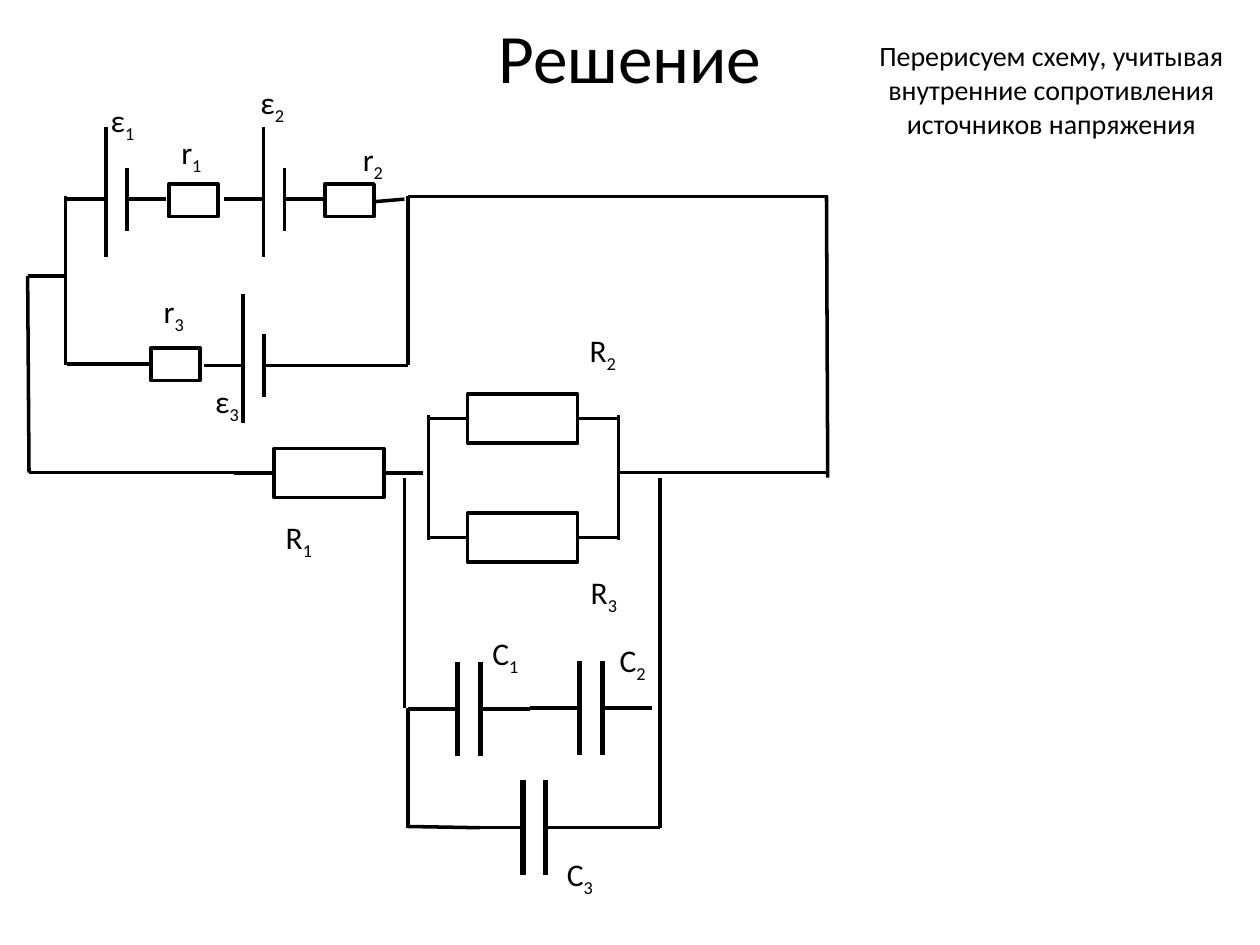
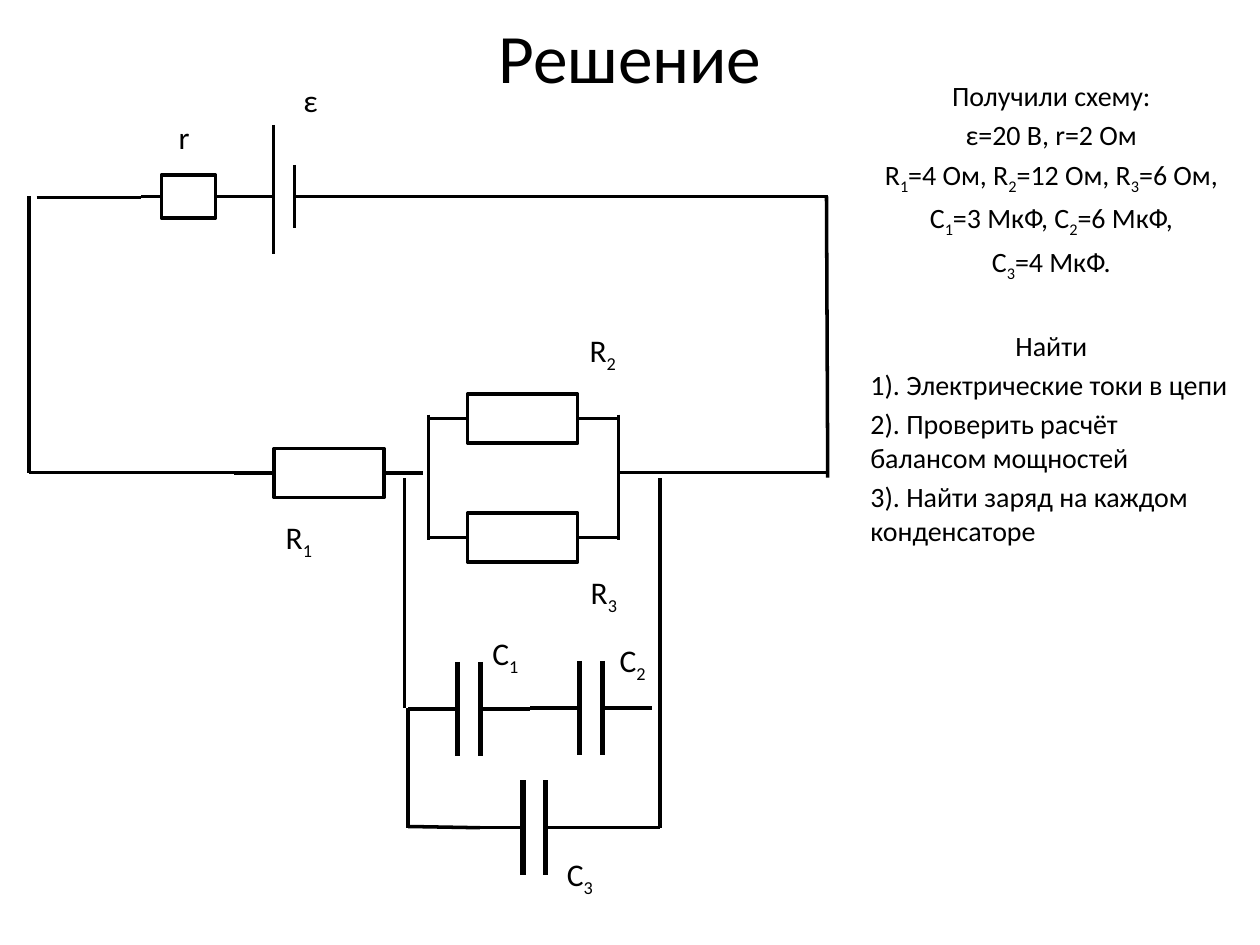
"""Build two slides that solve a circuit: the full scheme and the simplified one."""
import dataclasses

import lxml.etree
import pptx
import pptx.dml.color
import pptx.enum.shapes
import pptx.enum.text
import pptx.oxml.ns
import pptx.slide
import pptx.text.text
import pptx.util

Pt = pptx.util.Pt
ALIGN = pptx.enum.text.PP_ALIGN
AUTO_SIZE = pptx.enum.text.MSO_AUTO_SIZE
ANCHOR = pptx.enum.text.MSO_ANCHOR

COLOURS = {"ink": "000000", "paper": "FFFFFF"}
TITLE_FONT = {"name": "Calibri", "size": Pt(39.6)}
NOTE_FONT = {"name": "Calibri", "size": Pt(16)}
LABEL_FONT = {"name": "Calibri", "size": Pt(18)}
TITLE_FRAME = {"word_wrap": True, "auto_size": AUTO_SIZE.NONE, "vertical_anchor": ANCHOR.MIDDLE}
NOTE_FRAME = {"word_wrap": True, "auto_size": AUTO_SIZE.NONE, "vertical_anchor": ANCHOR.TOP}
LABEL_FRAME = {"word_wrap": False, "auto_size": AUTO_SIZE.SHAPE_TO_FIT_TEXT}
WIRE_WIDTH = 2
PLATE_WIDTH = 3


@dataclasses.dataclass(frozen=True)
class Wire:
    x1: float
    y1: float
    x2: float
    y2: float
    width: float = WIRE_WIDTH


@dataclasses.dataclass(frozen=True)
class Resistor:
    left: float
    axis: float
    width: float = 63
    height: float = 28
    lead: float = 22.5


@dataclasses.dataclass(frozen=True)
class Source:
    plate: float
    axis: float


@dataclasses.dataclass(frozen=True)
class Capacitor:
    plate: float
    axis: float


@dataclasses.dataclass(frozen=True)
class Label:
    text: str
    left: float
    top: float
    width: float = 30


@dataclasses.dataclass(frozen=True)
class Line:
    text: str
    alignment: ALIGN = ALIGN.CENTER
    space_before: float = 3.2


@dataclasses.dataclass(frozen=True)
class Scheme:
    circuit: list
    note_top: float
    note: list[Line]


LOAD = [
    Wire(16.6, 270, 135.4, 270),
    Wire(244.8, 236.9, 244.8, 308.5),
    Wire(353.5, 236.9, 353.5, 308.5),
    Wire(353.5, 270, 472.3, 270),
    Wire(472.3, 112.3, 473, 272.9),
    Wire(231.1, 404.6, 231.1, 272.9),
    Wire(233.3, 404.6, 233.3, 473),
    Wire(233.3, 472.3, 274.3, 473),
    Wire(339.8, 473, 377.3, 473),
    Wire(377.3, 473, 377.3, 272.9),
    Resistor(156.5, 270.3),
    Resistor(267.1, 239.3),
    Resistor(267.1, 307.2),
    Capacitor(261.4, 405.2),
    Capacitor(331.2, 404.6),
    Capacitor(298.8, 473),
    Label("R_1", 156.2, 292.3),
    Label("R_2", 329.8, 185.8),
    Label("R_3", 330.5, 324),
    Label("С_1", 274.3, 358.6),
    Label("С_2", 347, 362.9),
    Label("С_3", 316.8, 485.3),
]

INNER_RESISTOR = {"width": 28, "height": 18.7, "lead": 0}

FULL_SCHEME = Scheme(
    circuit=[
        Wire(37.4, 208.8, 37.4, 112.3),
        Wire(15.8, 157.7, 36.7, 157.7),
        Wire(16.6, 270, 15.8, 157.7),
        Wire(233.3, 112.3, 473, 112.3),
        Wire(173.5, 208.8, 233.3, 208.8),
        Wire(233.3, 208.8, 233.3, 112.3),
        Wire(38.2, 208.1, 86.4, 208.1),
        Wire(214.6, 115.2, 231.1, 113.8),
        Source(60.5, 113.8),
        Source(150.5, 113.8),
        Source(139, 208.8),
        Resistor(96.5, 114.5, **INNER_RESISTOR),
        Resistor(185.8, 114.5, **INNER_RESISTOR),
        Resistor(86.4, 208.1, **INNER_RESISTOR),
        Label("ε_1", 56.2, 54),
        Label("ε_2", 141.8, 43.9),
        Label("ε_3", 115.9, 214.6),
        Label("r_1", 96.5, 72.7, 27.4),
        Label("r_2", 200.2, 76.3, 27.4),
        Label("r_3", 86.4, 163.4, 27.4),
    ],
    note_top=18.7,
    note=[Line("Перерисуем схему, учитывая внутренние сопротивления источников напряжения")],
)

SIMPLE_SCHEME = Scheme(
    circuit=[
        Wire(20.9, 113, 80.6, 113),
        Wire(16.6, 270, 16.6, 112.3),
        Wire(190.8, 112.3, 473, 112.3),
        Source(156.2, 112.3),
        Resistor(92.2, 112.3, 31, 24.5, 11.5),
        Label("ε", 166.3, 42.5, 23),
        Label("r", 95, 64.1, 21),
    ],
    note_top=41.4,
    note=[
        Line("Получили схему:"),
        Line("ε=20 В, r=2 Ом"),
        Line("R_1=4 Ом, R_2=12 Ом, R_3=6 Ом,"),
        Line("С_1=3 МкФ, С_2=6 МкФ,"),
        Line("С_3=4 МкФ."),
        Line("Найти", space_before=26),
        Line("1). Электрические токи в цепи", ALIGN.LEFT),
        Line("2). Проверить расчёт балансом мощностей", ALIGN.LEFT),
        Line("3). Найти заряд на каждом конденсаторе", ALIGN.LEFT),
    ],
)


def colour(name: str) -> pptx.dml.color.RGBColor:
    return pptx.dml.color.RGBColor.from_string(COLOURS[name])


def apply(target: object, values: dict) -> None:
    for name, value in values.items():
        setattr(target, name, value)


def write_run(paragraph: pptx.text.text._Paragraph, text: str, font: dict, lowered: bool = False) -> None:
    run = paragraph.add_run()
    run.text = text
    apply(run.font, font)
    run.font.color.rgb = colour("ink")
    if lowered:
        run._r.get_or_add_rPr().set("baseline", "-25000")


def write(paragraph: pptx.text.text._Paragraph, text: str, font: dict) -> None:
    first, *indexed = text.split("_")
    write_run(paragraph, first, font)
    for piece in indexed:
        write_run(paragraph, piece[0], font, lowered=True)
        if piece[1:]:
            write_run(paragraph, piece[1:], font)


def draw_wire(slide: pptx.slide.Slide, wire: Wire) -> None:
    ends = map(Pt, (wire.x1, wire.y1, wire.x2, wire.y2))
    conductor = slide.shapes.add_connector(pptx.enum.shapes.MSO_CONNECTOR.STRAIGHT, *ends)
    conductor.line.color.rgb = colour("ink")
    conductor.line.width = Pt(wire.width)
    lxml.etree.SubElement(conductor._element.spPr, pptx.oxml.ns.qn("a:effectLst"))


def draw_leads(slide: pptx.slide.Slide, left: float, right: float, axis: float, lead: float) -> None:
    draw_wire(slide, Wire(left - lead, axis, left, axis))
    draw_wire(slide, Wire(right, axis, right + lead, axis))


def draw_resistor(slide: pptx.slide.Slide, resistor: Resistor) -> None:
    place = (resistor.left, resistor.axis - resistor.height / 2, resistor.width, resistor.height)
    body = slide.shapes.add_shape(pptx.enum.shapes.MSO_SHAPE.RECTANGLE, *map(Pt, place))
    body.shadow.inherit = False
    body.fill.background()
    body.line.color.rgb = colour("ink")
    body.line.width = Pt(WIRE_WIDTH)
    if resistor.lead:
        draw_leads(slide, resistor.left, resistor.left + resistor.width, resistor.axis, resistor.lead)


def draw_source(slide: pptx.slide.Slide, source: Source) -> None:
    long, short, axis = source.plate, source.plate + 12, source.axis
    draw_wire(slide, Wire(long, axis - 41, long, axis + 33))
    draw_wire(slide, Wire(short, axis - 18, short, axis + 18))
    draw_leads(slide, long, short, axis, 22.5)


def draw_capacitor(slide: pptx.slide.Slide, capacitor: Capacitor) -> None:
    plates = (capacitor.plate, capacitor.plate + 13)
    for plate in plates:
        draw_wire(slide, Wire(plate, capacitor.axis - 27, plate, capacitor.axis + 27, PLATE_WIDTH))
    draw_leads(slide, *plates, capacitor.axis, 28.2)


def draw_label(slide: pptx.slide.Slide, label: Label) -> None:
    place = map(Pt, (label.left, label.top, label.width, 29))
    frame = slide.shapes.add_textbox(*place).text_frame
    apply(frame, LABEL_FRAME)
    write(frame.paragraphs[0], label.text, LABEL_FONT)


def draw_title(slide: pptx.slide.Slide, text: str) -> None:
    title = slide.shapes.title
    apply(title, {"left": Pt(54), "top": Pt(9.4), "width": Pt(612), "height": Pt(45.4)})
    apply(title.text_frame, TITLE_FRAME)
    heading = title.text_frame.paragraphs[0]
    heading.alignment = ALIGN.CENTER
    write(heading, text, TITLE_FONT)


def draw_note(slide: pptx.slide.Slide, scheme: Scheme) -> None:
    place = map(Pt, (490.3, scheme.note_top, 221, 507.6 - scheme.note_top))
    frame = slide.shapes.add_textbox(*place).text_frame
    apply(frame, NOTE_FRAME)
    for number, line in enumerate(scheme.note):
        paragraph = frame.add_paragraph() if number else frame.paragraphs[0]
        apply(paragraph, {"alignment": line.alignment, "space_before": Pt(line.space_before)})
        write(paragraph, line.text, NOTE_FONT)


DRAW = {
    Wire: draw_wire,
    Resistor: draw_resistor,
    Source: draw_source,
    Capacitor: draw_capacitor,
    Label: draw_label,
}


def main() -> None:
    deck = pptx.Presentation()
    apply(deck, {"slide_width": Pt(720), "slide_height": Pt(540)})
    title_only = deck.slide_layouts[5]
    for scheme in (FULL_SCHEME, SIMPLE_SCHEME):
        slide = deck.slides.add_slide(title_only)
        slide.background.fill.solid()
        slide.background.fill.fore_color.rgb = colour("paper")
        draw_title(slide, "Решение")
        draw_note(slide, scheme)
        for component in LOAD + scheme.circuit:
            DRAW[type(component)](slide, component)
    deck.save("out.pptx")


if __name__ == "__main__":
    main()
